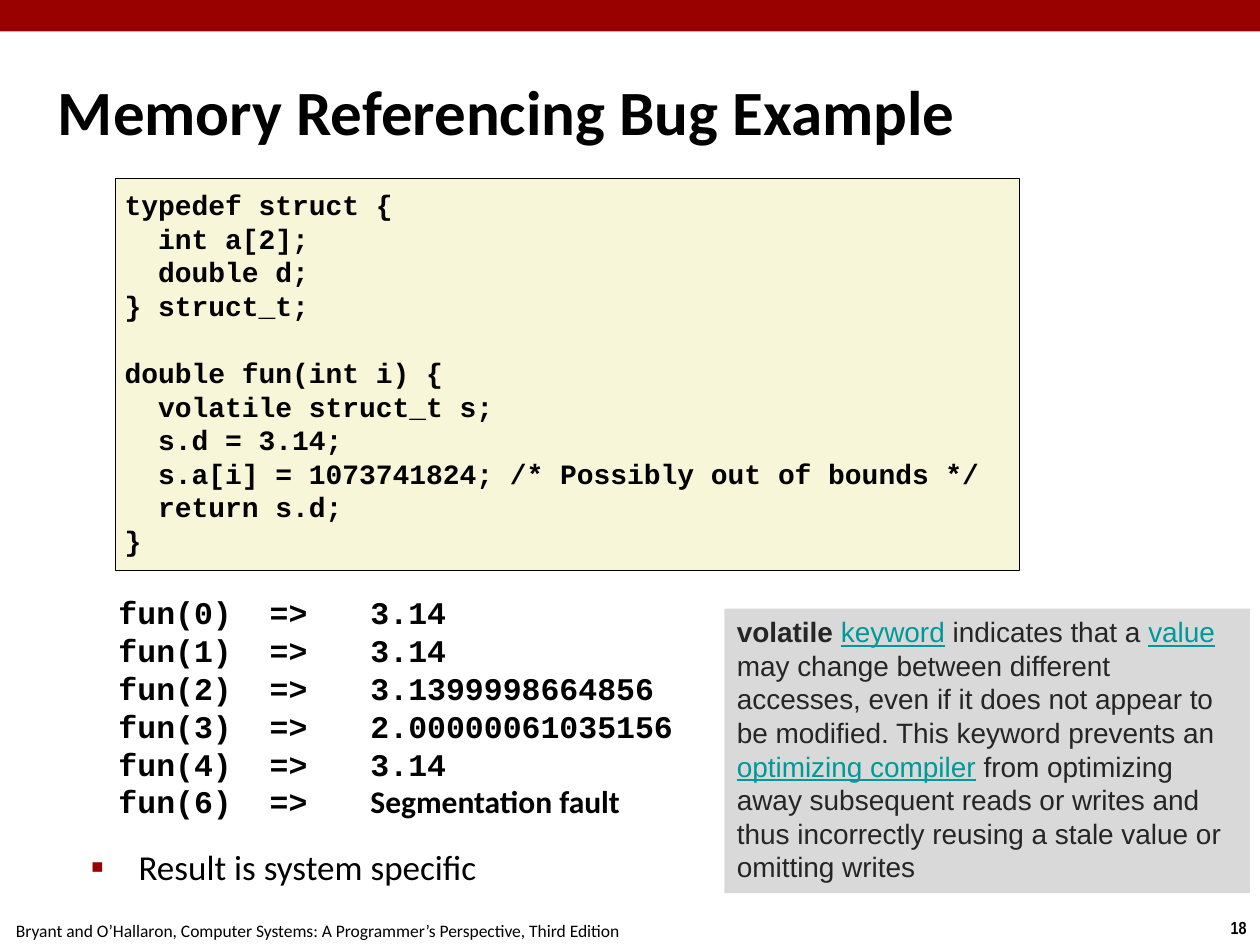
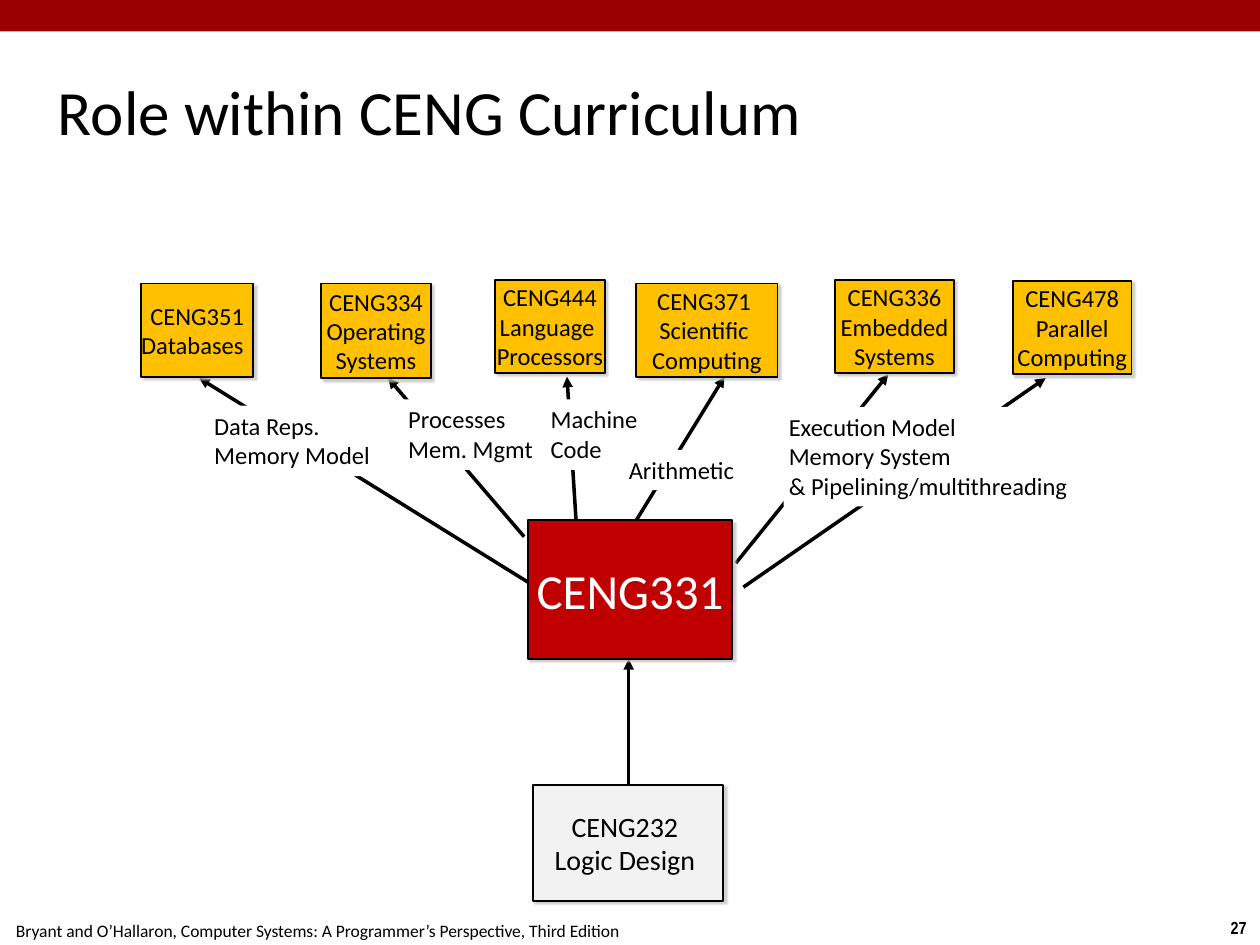
"""Builds two lecture slides: a memory referencing bug and a curriculum map."""
from lxml.etree import SubElement
from pptx import Presentation
from pptx.dml.color import RGBColor
from pptx.enum.shapes import MSO_CONNECTOR, MSO_SHAPE
from pptx.enum.text import MSO_ANCHOR, PP_ALIGN
from pptx.oxml.ns import qn
from pptx.util import Inches, Pt

COLORS = {
    "band": "990000", "ink": "000000", "paper": "FFFFFF", "code": "F8F6D9",
    "note": "D9D9D9", "note_ink": "252525", "link": "009999", "course": "FFC000",
    "core": "C00000", "base": "F2F2F2", "shadow": "C0C0C0",
}
FOOTER = "Bryant and O’Hallaron, Computer Systems: A Programmer’s Perspective, Third Edition"

CODE = """typedef struct {
  int a[2];
  double d;
} struct_t;
double fun(int i) {
  volatile struct_t s;
  s.d = 3.14;
  s.a[i] = 1073741824; /* Possibly out of bounds */
  return s.d;
}""".split("\n")
FUNCTION_LINE = 4

RESULTS = [(0, "3.14"), (1, "3.14"), (2, "3.1399998664856"),
           (3, "2.00000061035156"), (4, "3.14"), (6, "Segmentation fault")]

LINK = {"color": "link", "underline": True}
VOLATILE_NOTE = [
    ("volatile ", {"bold": True}), ("keyword", LINK), (" indicates that a ", {}),
    ("value", LINK),
    (" may change between different accesses, even if it does not appear to be modified."
     " This keyword prevents an ", {}),
    ("optimizing compiler", LINK),
    (" from optimizing away subsequent reads or writes and thus incorrectly reusing"
     " a stale value or omitting writes", {}),
]

COURSES = [
    ((1.12, 2.25, 0.89, 0.74), ["CENG351", "Databases"]),
    ((2.55, 2.25, 0.87, 0.75), ["CENG334", "Operating", "Systems"]),
    ((3.93, 2.22, 0.87, 0.74), ["CENG444", "Language ", "Processors"]),
    ((5.05, 2.25, 1.12, 0.74), ["CENG371 ", "Scientific ", "Computing"]),
    ((6.63, 2.22, 0.94, 0.74), ["CENG336", "Embedded", "Systems"]),
    ((8.04, 2.23, 0.94, 0.74), ["CENG478", "Parallel", "Computing"]),
]
TOPICS = [
    ((1.66, 3.22, 1.36, 0.56), ["Data Reps.", "Memory Model"]),
    ((3.2, 3.17, 1.1, 0.56), ["Processes", "Mem. Mgmt"]),
    ((4.33, 3.17, 0.8, 0.56), ["Machine", "Code"]),
    ((4.95, 3.57, 0.95, 0.32), ["Arithmetic"]),
    ((6.22, 3.23, 2.38, 0.79),
     ["Execution Model", "Memory System", "& Pipelining/multithreading"]),
]
ARROWS = [
    ((4.27, 4.67), (1.58, 3)), ((4.16, 4.26), (3.08, 3)), ((4.58, 4.26), (4.5, 2.99)),
    ((4.97, 4.26), (5.75, 2.99)), ((5.84, 4.47), (7.05, 2.97)), ((5.9, 4.66), (8.3, 3)),
    ((4.99, 6.24), (4.99, 5.23)),
]


def rgb(name):
    return RGBColor.from_string(COLORS[name])


class Deck:
    """Holds the presentation, its style and the current slide."""

    def __init__(self):
        self.prs = Presentation()
        self.prs.slide_width, self.prs.slide_height = Inches(10), Inches(7.5)
        self.slide = None

    def new_slide(self, title, number, bold=False):
        self.slide = self.prs.slides.add_slide(self.prs.slide_layouts[6])
        self.text((9.66, 7.23, 0.34, 0.27), [number], size=10, font="Arial Narrow",
                  bold=True, align=PP_ALIGN.CENTER, inset=0.05, wrap=False)
        self.text((-0.02, 7.25, 5.08, 0.27), [FOOTER], size=10,
                  align=PP_ALIGN.CENTER, inset=0.05, wrap=False)
        self.panel((0, 0, 10.01, 0.25), "band")
        self.text((0.42, 0.28, 9.17, 1.19), [title], size=36, bold=bold,
                  anchor=MSO_ANCHOR.MIDDLE)

    def text(self, at, paragraphs, **style):
        box = self.slide.shapes.add_textbox(*map(Inches, at))
        return self.fill_frame(box.text_frame, paragraphs, **style)

    def panel(self, at, fill, paragraphs=(), line=None, shadow=False, **style):
        panel = self.slide.shapes.add_shape(MSO_SHAPE.RECTANGLE, *map(Inches, at))
        panel.fill.solid()
        panel.fill.fore_color.rgb = rgb(fill)
        if line:
            panel.line.color.rgb = rgb("ink")
            panel.line.width = Pt(line)
        else:
            panel.line.fill.background()
        panel.shadow.inherit = False
        if shadow:
            self.cast_shadow(panel)
        return self.fill_frame(panel.text_frame, paragraphs, **style)

    def cast_shadow(self, panel):
        effects = panel._element.spPr.find(qn("a:effectLst"))
        outer = SubElement(effects, qn("a:outerShdw"), blurRad=str(Pt(1)),
                           dist=str(Pt(2)), dir=str(45 * 60000))
        tint = SubElement(outer, qn("a:srgbClr"), val=COLORS["shadow"])
        SubElement(tint, qn("a:alpha"), val="75000")

    def fill_frame(self, frame, paragraphs, size=14, font="Calibri", color="ink",
                   bold=False, align=PP_ALIGN.LEFT, anchor=MSO_ANCHOR.TOP, inset=0.04,
                   wrap=True, leading=None):
        frame.word_wrap = wrap
        frame.vertical_anchor = anchor
        frame.margin_left = frame.margin_right = Inches(inset)
        frame.margin_top = frame.margin_bottom = Inches(inset)
        for index, content in enumerate(paragraphs):
            paragraph = frame.add_paragraph() if index else frame.paragraphs[0]
            paragraph.alignment = align
            if leading:
                paragraph.line_spacing = Pt(leading)
            pieces = [(content, {})] if isinstance(content, str) else content
            for words, changes in pieces:
                run = paragraph.add_run()
                run.text = words
                run.font.size = Pt(size)
                run.font.name = changes.get("font", font)
                run.font.bold = changes.get("bold", bold)
                run.font.underline = changes.get("underline", False)
                run.font.color.rgb = rgb(changes.get("color", color))
        return frame

    def bullet(self, at, words):
        paragraph = self.text(at, [words], size=20).paragraphs[0]
        paragraph.space_before = Pt(5)
        props = paragraph._p.get_or_add_pPr()
        props.set("marL", str(Inches(0.56)))
        props.set("indent", str(Inches(-0.38)))
        mark_color = SubElement(props, qn("a:buClr"))
        SubElement(mark_color, qn("a:srgbClr"), val=COLORS["band"])
        SubElement(props, qn("a:buSzPct"), val="110000")
        SubElement(props, qn("a:buFont"), typeface="Arial")
        SubElement(props, qn("a:buChar"), char="▪")

    def tab_stops(self, frame, stops):
        for paragraph in frame.paragraphs:
            tabs = SubElement(paragraph._p.get_or_add_pPr(), qn("a:tabLst"))
            for stop in stops:
                SubElement(tabs, qn("a:tab"), pos=str(Inches(stop)), algn="l")

    def arrow(self, start, end):
        arrow = self.slide.shapes.add_connector(
            MSO_CONNECTOR.STRAIGHT, *map(Inches, start + end))
        arrow.line.color.rgb = rgb("ink")
        arrow.line.width = Pt(2)
        SubElement(arrow.line._get_or_add_ln(), qn("a:tailEnd"), type="triangle")
        SubElement(arrow._element.spPr, qn("a:effectLst"))


def bug_slide(deck):
    deck.new_slide("Memory Referencing Bug Example", "18", bold=True)
    deck.bullet((0.5, 6.67, 9, 0.62), "Result is system specific")
    calls = []
    for argument, result in RESULTS:
        font = "Calibri" if result.startswith("Seg") else "Courier New"
        calls.append([(f"fun({argument})\t=>\t", {}), (result, {"font": font})])
    results = deck.panel((0.9, 4.67, 8.01, 2), "paper", calls, size=18,
                         font="Courier New", bold=True, leading=21.6)
    deck.tab_stops(results, [1.2, 2])
    code = deck.panel((0.92, 1.42, 7.17, 3.11), "code", CODE, line=0.5, size=16,
                      font="Courier New", bold=True, inset=0.07, leading=19.2)
    code.paragraphs[FUNCTION_LINE].space_before = Pt(19.2)
    note = deck.panel((5.75, 4.83, 4.17, 2.26), "note", [VOLATILE_NOTE], size=16,
                      font="Arial", color="note_ink", leading=19.2)
    note.margin_left = note.margin_right = Inches(0.1)
    note.margin_top = Inches(0.05)


def curriculum_slide(deck):
    deck.new_slide("Role within CENG Curriculum", "27")
    for start, end in ARROWS:
        deck.arrow(start, end)
    node = {"line": 1, "shadow": True, "align": PP_ALIGN.CENTER,
            "anchor": MSO_ANCHOR.MIDDLE, "wrap": False}
    for at, lines in COURSES:
        course = deck.panel(at, "course", lines, inset=0, **node)
        if "Databases" in lines:
            course.paragraphs[1].alignment = PP_ALIGN.LEFT
    deck.panel((4.23, 6.23, 1.51, 0.92), "base", ["CENG232 ", "Logic Design "],
               size=16, **node)
    deck.panel((4.19, 4.13, 1.62, 1.1), "core", ["CENG331"], size=28,
               color="paper", inset=0, **node)
    for at, lines in TOPICS:
        deck.panel(at, "paper", lines, wrap=False)


def main():
    deck = Deck()
    bug_slide(deck)
    curriculum_slide(deck)
    deck.prs.save("out.pptx")


if __name__ == "__main__":
    main()
